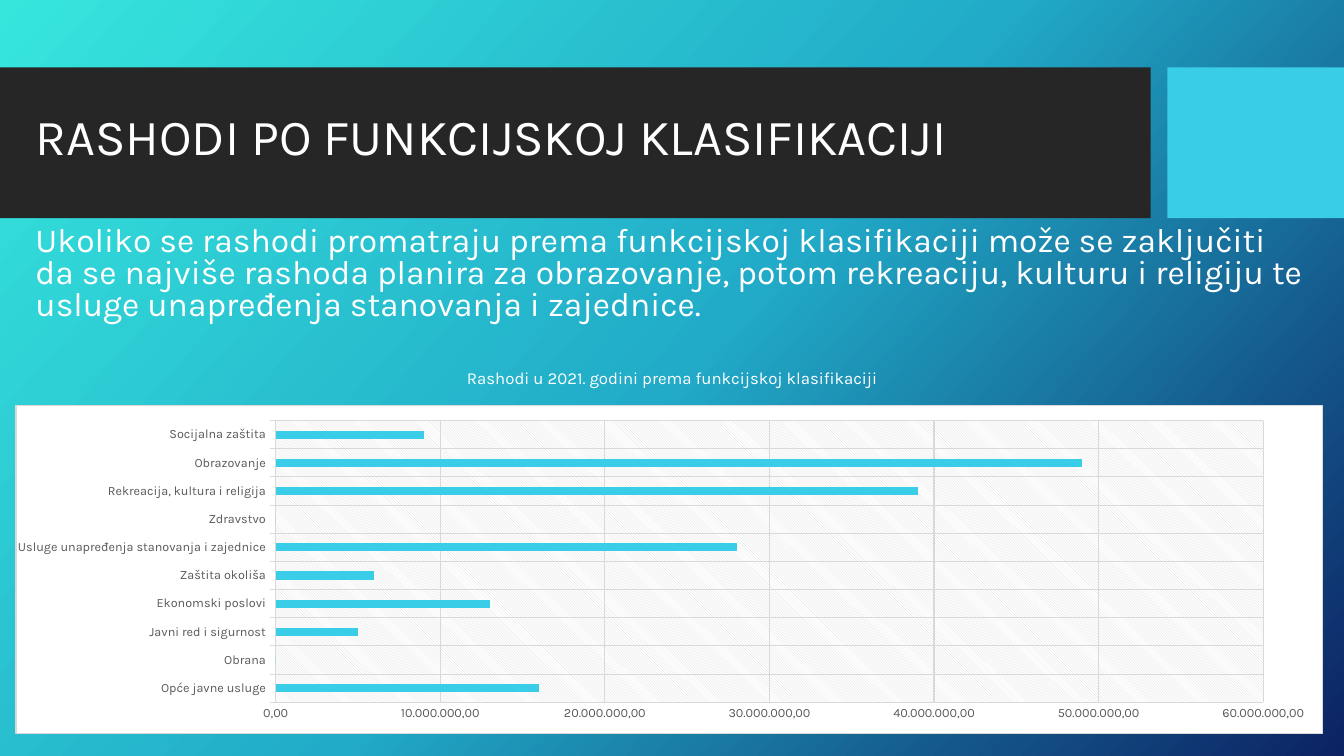
from copy import deepcopy

from pptx import Presentation
from pptx.chart.data import CategoryChartData
from pptx.dml.color import RGBColor
from pptx.enum.chart import XL_CHART_TYPE, XL_TICK_MARK
from pptx.enum.shapes import MSO_SHAPE
from pptx.enum.text import MSO_ANCHOR, MSO_AUTO_SIZE, PP_ALIGN
from pptx.oxml import parse_xml
from pptx.oxml.ns import nsdecls, qn
from pptx.util import Cm, Pt

FONT = "Karla"
WHITE = RGBColor(0xFF, 0xFF, 0xFF)
DARK = RGBColor(0x26, 0x26, 0x26)
CYAN = RGBColor(0x39, 0xCD, 0xE7)
GREY = RGBColor(0x59, 0x59, 0x59)
PALE = RGBColor(0xD9, 0xD9, 0xD9)
STOPS = [
    (0, RGBColor(0x36, 0xE6, 0xDD)),
    (0.5, RGBColor(0x21, 0xAB, 0xC8)),
    (1, RGBColor(0x0C, 0x22, 0x63)),
]

TITLE = "RASHODI PO FUNKCIJSKOJ KLASIFIKACIJI"
INTRO = (
    "Ukoliko se rashodi promatraju prema funkcijskoj klasifikaciji može se "
    "zaključiti da se najviše rashoda planira za obrazovanje, potom rekreaciju, "
    "kulturu i religiju te usluge unapređenja stanovanja i zajednice."
)
CAPTION = "Rashodi u 2021. godini prema funkcijskoj klasifikaciji"
MILLION = 1_000_000
COSTS = {
    "Opće javne usluge": 16,
    "Obrana": 0,
    "Javni red i sigurnost": 5,
    "Ekonomski poslovi": 13,
    "Zaštita okoliša": 6,
    "Usluge unapređenja stanovanja i zajednice": 28,
    "Zdravstvo": 0,
    "Rekreacija, kultura i religija": 39,
    "Obrazovanje": 49,
    "Socijalna zaštita": 9,
}


def paint_back(slide):
    fill = slide.background.fill
    fill.gradient()
    fill.gradient_angle = 318
    stops = slide.element.find(".//" + qn("a:gsLst"))
    stops.append(deepcopy(stops[-1]))
    for stop, (place, color) in zip(fill.gradient_stops, STOPS):
        stop.position = place
        stop.color.rgb = color


def add_band(slide, left, top, width, height):
    """Draw the dark band and its cyan tile behind the text."""
    gap, tile = 0.42, 4.45
    bar = width - gap - tile
    parts = [(left, bar, DARK), (left + bar + gap, tile, CYAN)]
    for x, size, color in parts:
        rect = slide.shapes.add_shape(
            MSO_SHAPE.RECTANGLE, Cm(x), Cm(top), Cm(size), Cm(height))
        rect.shadow.inherit = False
        rect.fill.solid()
        rect.fill.fore_color.rgb = color
        rect.line.fill.background()
        slide.shapes.element.insert(2, rect.element)


def set_text(holder, box, text, size, spacing, align=PP_ALIGN.LEFT,
             anchor=MSO_ANCHOR.TOP):
    holder.left, holder.top, holder.width, holder.height = map(Cm, box)
    frame = holder.text_frame
    frame.text = text
    frame.word_wrap = True
    frame.auto_size = MSO_AUTO_SIZE.NONE
    frame.vertical_anchor = anchor
    para = frame.paragraphs[0]
    para.alignment = align
    para.line_spacing = spacing
    para.space_before = Pt(0)
    font = para.runs[0].font
    font.name, font.size, font.bold = FONT, Pt(size), False
    font.color.rgb = WHITE


def style_axis(axis):
    axis.has_major_gridlines = True
    axis.major_gridlines.format.line.color.rgb = PALE
    axis.major_gridlines.format.line.width = Pt(0.75)
    font = axis.tick_labels.font
    font.name, font.size = FONT, Pt(9)
    font.color.rgb = GREY


def frame_chart(chart, width, height):
    """Fix the plot position, hatch the plot and frame the chart area."""
    space = chart.element
    plot = space.find(".//" + qn("c:plotArea"))
    old = plot.find(qn("c:layout"))
    if old is not None:
        plot.remove(old)
    modes = "".join(f'<c:{side}Mode val="edge"/>' for side in "xy")
    shares = (6.55 / width, 0.39 / height, 24.9 / width, 7.12 / height)
    sizes = "".join(
        f'<c:{name} val="{share:.4f}"/>' for name, share in zip("xywh", shares))
    plot.insert(0, parse_xml(
        f'<c:layout {nsdecls("c")}><c:manualLayout>'
        f'<c:layoutTarget val="inner"/>{modes}{sizes}'
        '</c:manualLayout></c:layout>'))
    plot.append(parse_xml(
        f'<c:spPr {nsdecls("c", "a")}><a:pattFill prst="ltDnDiag">'
        f'<a:fgClr><a:srgbClr val="{PALE}"/></a:fgClr>'
        f'<a:bgClr><a:srgbClr val="{WHITE}"/></a:bgClr>'
        '</a:pattFill><a:ln><a:noFill/></a:ln></c:spPr>'))
    space.find(qn("c:chart")).addnext(parse_xml(
        f'<c:spPr {nsdecls("c", "a")}>'
        f'<a:solidFill><a:srgbClr val="{WHITE}"/></a:solidFill>'
        f'<a:ln w="{Pt(0.75)}"><a:solidFill><a:srgbClr val="{PALE}"/>'
        '</a:solidFill></a:ln></c:spPr>'))


def add_costs(slide, left, top, width, height):
    data = CategoryChartData()
    data.categories = list(COSTS)
    data.add_series("Rashodi", [cost * MILLION for cost in COSTS.values()])
    chart = slide.shapes.add_chart(
        XL_CHART_TYPE.BAR_CLUSTERED,
        Cm(left), Cm(top), Cm(width), Cm(height), data).chart
    chart.has_title = False
    chart.has_legend = False
    chart.font.name, chart.font.size = FONT, Pt(10)
    chart.font.color.rgb = WHITE

    bars = chart.plots[0]
    bars.gap_width = 247
    bars.vary_by_categories = False
    fill = bars.series[0].format.fill
    fill.solid()
    fill.fore_color.rgb = CYAN

    names, sums = chart.category_axis, chart.value_axis
    for axis in (names, sums):
        style_axis(axis)
    names.major_tick_mark = XL_TICK_MARK.OUTSIDE
    names.format.line.color.rgb = PALE
    names.format.line.width = Pt(0.75)
    sums.major_tick_mark = XL_TICK_MARK.NONE
    sums.format.line.fill.background()
    sums.minimum_scale, sums.maximum_scale = 0, 60 * MILLION
    sums.major_unit = 10 * MILLION
    sums.tick_labels.number_format = r"[$-1041A]#,##0.00;\-\ #,##0.00"
    sums.tick_labels.number_format_is_linked = False
    frame_chart(chart, width, height)


def build_slide(deck):
    slide = deck.slides.add_slide(deck.slide_layouts.get_by_name("Comparison"))
    title, intro, spare, caption, extra = slide.placeholders
    for holder in (spare, extra):
        slide.shapes.element.remove(holder.element)
    paint_back(slide)
    add_band(slide, 0, 1.7, 33.86, 3.8)
    set_text(title, (0.64, 2.64, 32.46, 1.75), TITLE, 36, 0.9,
             anchor=MSO_ANCHOR.MIDDLE)
    set_text(intro, (0.64, 5.58, 32.46, 2.92), INTRO, 24, 0.8)
    set_text(caption, (10.08, 9.24, 13.72, 0.71), CAPTION, 12, 0.8,
             PP_ALIGN.CENTER)
    add_costs(slide, 0.39, 10.2, 32.94, 8.3)


def main():
    deck = Presentation()
    deck.slide_width, deck.slide_height = Cm(33.86), Cm(19.05)
    build_slide(deck)
    deck.save("out.pptx")


if __name__ == "__main__":
    main()
